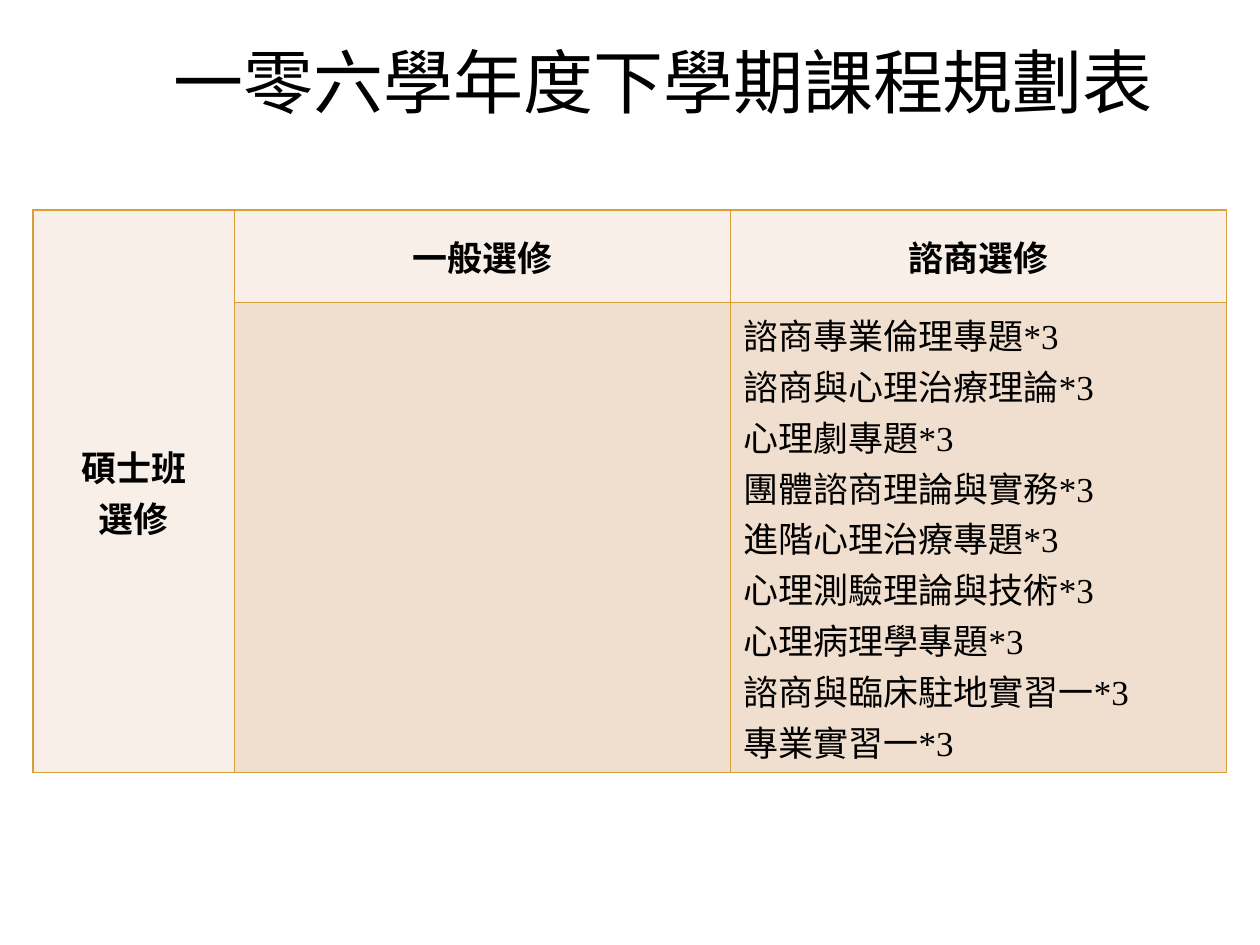
from lxml import etree
from pptx import Presentation
from pptx.dml.color import RGBColor
from pptx.enum import text
from pptx.oxml import ns
from pptx.util import Pt

# Content
TITLE = "一零六學年度下學期課程規劃表"
PROGRAM = ["碩士班", "選修"]
HEADINGS = ["一般選修", "諮商選修"]
COUNSELING_COURSES = [
    "諮商專業倫理專題*3",
    "諮商與心理治療理論*3",
    "心理劇專題*3",
    "團體諮商理論與實務*3",
    "進階心理治療專題*3",
    "心理測驗理論與技術*3",
    "心理病理學專題*3",
    "諮商與臨床駐地實習一*3",
    "專業實習一*3",
]

# Style
BLACK = RGBColor(0x00, 0x00, 0x00)
HEADING_FILL = RGBColor(0xF8, 0xF0, 0xE8)
BODY_FILL = RGBColor(0xF0, 0xDF, 0xCE)
BORDER = RGBColor(0xD8, 0x9F, 0x39)
LATIN_FONT = "Times New Roman"
CJK_FONT = "Noto Sans CJK SC"

# Table grid
TABLE_LEFT, TABLE_TOP = 19, 120
COLUMN_WIDTHS = [115, 283.5, 283.5]
ROW_HEIGHTS = [53, 268.5]


def format_text(frame, size, font, bold, alignment):
    for paragraph in frame.paragraphs:
        paragraph.alignment = alignment
        for run in paragraph.runs:
            run.font.size = Pt(size)
            run.font.name = font
            run.font.bold = bold
            run.font.color.rgb = BLACK
            properties = run._r.get_or_add_rPr()
            etree.SubElement(properties, ns.qn("a:ea"), typeface=CJK_FONT)


def add_borders(cell):
    properties = cell._tc.get_or_add_tcPr()
    for side in ("lnL", "lnR", "lnT", "lnB"):
        line = etree.SubElement(properties, ns.qn(f"a:{side}"), w=str(Pt(1)))
        fill = etree.SubElement(line, ns.qn("a:solidFill"))
        etree.SubElement(fill, ns.qn("a:srgbClr"), val=str(BORDER))


def fill_cell(cell, lines, heading):
    cell.text_frame.text = "\n".join(lines)
    alignment = text.PP_ALIGN.CENTER if heading else text.PP_ALIGN.LEFT
    format_text(cell.text_frame, 20, LATIN_FONT, heading, alignment)
    if heading:
        cell.vertical_anchor = text.MSO_ANCHOR.MIDDLE


presentation = Presentation()
presentation.slide_width, presentation.slide_height = Pt(720), Pt(540)
slide = presentation.slides.add_slide(presentation.slide_layouts[5])

# Title
title = slide.shapes.title
title.left, title.top, title.width, title.height = Pt(81), Pt(32), Pt(596), Pt(38)
frame = title.text_frame
frame.text = TITLE
frame.word_wrap = True
frame.auto_size = text.MSO_AUTO_SIZE.NONE
frame.vertical_anchor = text.MSO_ANCHOR.BOTTOM
frame.margin_left = frame.margin_right = frame.margin_top = frame.margin_bottom = 0
format_text(frame, 40, CJK_FONT, False, text.PP_ALIGN.CENTER)

# Course table
table = slide.shapes.add_table(
    len(ROW_HEIGHTS), len(COLUMN_WIDTHS), Pt(TABLE_LEFT), Pt(TABLE_TOP),
    Pt(sum(COLUMN_WIDTHS)), Pt(sum(ROW_HEIGHTS))).table
for column, width in zip(table.columns, COLUMN_WIDTHS):
    column.width = Pt(width)
for row, height in zip(table.rows, ROW_HEIGHTS):
    row.height = Pt(height)

for row_index, row in enumerate(table.rows):
    for column_index, cell in enumerate(row.cells):
        add_borders(cell)
        is_heading = row_index == 0 or column_index == 0
        cell.fill.solid()
        cell.fill.fore_color.rgb = HEADING_FILL if is_heading else BODY_FILL

table.cell(0, 0).merge(table.cell(1, 0))
fill_cell(table.cell(0, 0), PROGRAM, True)
for column_index, heading in enumerate(HEADINGS, start=1):
    fill_cell(table.cell(0, column_index), [heading], True)
fill_cell(table.cell(1, 2), COUNSELING_COURSES, False)

presentation.save("out.pptx")
